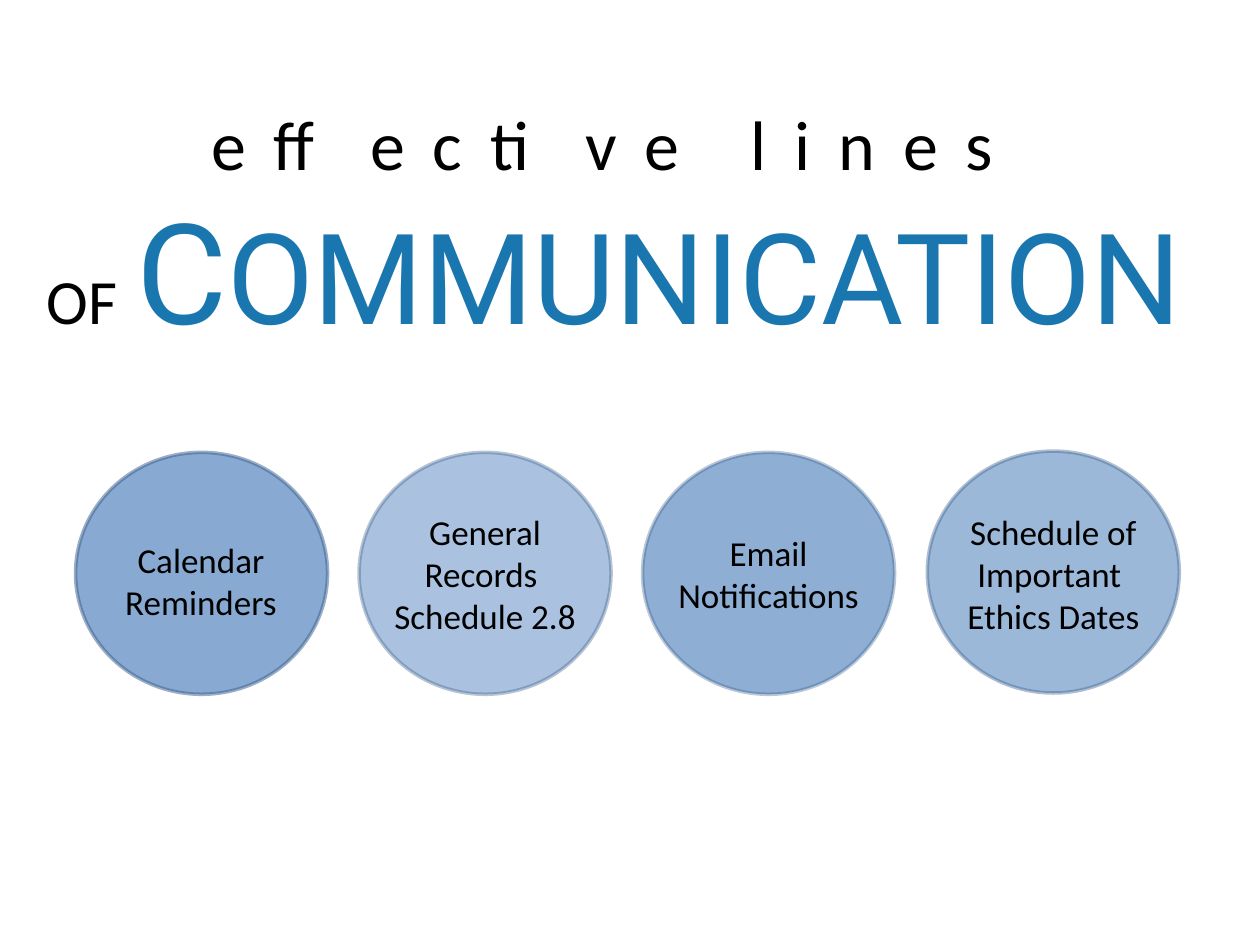
from lxml import etree
from pptx import Presentation
from pptx import util as u
from pptx.dml.color import RGBColor
from pptx.enum import shapes, text
from pptx.oxml.ns import qn

PX = u.Inches(1) // 100  # 100 px to the inch

BLACK = RGBColor(0x00, 0x00, 0x00)
TITLE_BLUE = RGBColor(0x19, 0x76, 0xAF)
CIRCLE_BLUE = RGBColor(0x4F, 0x81, 0xBD)
RIM_BLUE = RGBColor(0x3A, 0x5F, 0x8C)

TITLE_BOX = (25, 75, 942, 212)
CIRCLE_ROW = (60, 359, 876, 192)
CIRCLE_WIDTH = 200

# words, size, font, colour, letter spacing in points
TITLE_LINES = [
    [("effective lines ", 40, "Calibri", BLACK, 16)],
    [("OF", 36, "Calibri", BLACK, 0),
     (" ", 48, "Calibri", BLACK, 0),
     ("C", 80, "Roboto", TITLE_BLUE, 0),
     ("OMMUNICATION", 72, "Roboto", TITLE_BLUE, 0),
     (" ", 48, "Lato", TITLE_BLUE, 0)],
]

# label lines, label box relative to its circle, side and top inset,
# circle rise, fill and rim opacity in percent
CHANNELS = [
    (["Calendar Reminders"], (12, 68, 175, 67), 0, 0, 67, 50),
    (["General Records ", "Schedule 2.8"], (0, 41, 200, 111), None, 0, 48, 37),
    (["Email Notifications"], (0, 58, 200, 77), None, 0, 64, 34),
    (["Schedule of Important ", "Ethics Dates"], (-4, 42, 208, 111), None, 1, 56, 40),
]


def emu(*lengths):
    return [length * PX for length in lengths]


def add_title(page, box):
    title = page.shapes.title
    title.left, title.top, title.width, title.height = emu(*box)
    frame = title.text_frame
    frame.word_wrap = True
    frame.auto_size = text.MSO_AUTO_SIZE.NONE
    frame.vertical_anchor = text.MSO_ANCHOR.TOP
    for index, line in enumerate(TITLE_LINES):
        para = frame.add_paragraph() if index else frame.paragraphs[0]
        para.alignment = text.PP_ALIGN.CENTER
        for words, size, font, colour, spacing in line:
            span = para.add_run()
            span.text = words
            span.font.size = u.Pt(size)
            span.font.name = font
            span.font.color.rgb = colour
            if spacing:
                span.font._element.set("spc", str(spacing * 100))


def add_circle(page, box, fill_opacity, rim_opacity):
    circle = page.shapes.add_shape(shapes.MSO_SHAPE.OVAL, *emu(*box))
    circle.shadow.inherit = False
    circle.fill.solid()
    circle.fill.fore_color.rgb = CIRCLE_BLUE
    circle.line.color.rgb = RIM_BLUE
    circle.line.width = u.Pt(2)
    colours = circle._element.spPr.iter(qn("a:srgbClr"))
    for colour, opacity in zip(colours, (fill_opacity, rim_opacity)):
        etree.SubElement(colour, qn("a:alpha"), val=str(opacity * 1000))


def add_label(page, box, lines, inset):
    frame = page.shapes.add_textbox(*emu(*box)).text_frame
    frame.word_wrap = True
    if inset is not None:
        frame.margin_left = frame.margin_right = inset * PX
        frame.margin_top = frame.margin_bottom = inset * PX
    for index, line in enumerate(lines):
        para = frame.add_paragraph() if index else frame.paragraphs[0]
        para.text = line
        para.alignment = text.PP_ALIGN.CENTER
        para.font.size = u.Pt(20)
        para.font.name = "Calibri"
        para.font.color.rgb = BLACK


def add_channels(page, box):
    """Spread the labelled circles evenly over the width of the box."""
    left, top, width, height = box
    span = width - CIRCLE_WIDTH
    for index, channel in enumerate(CHANNELS):
        lines, label, inset, rise, fill_opacity, rim_opacity = channel
        x = left + index * span // (len(CHANNELS) - 1)
        y = top - rise
        add_circle(page, (x, y, CIRCLE_WIDTH, height), fill_opacity, rim_opacity)
        dx, dy, label_width, label_height = label
        add_label(page, (x + dx, y + dy, label_width, label_height), lines, inset)


def main():
    deck = Presentation()
    deck.slide_width, deck.slide_height = emu(1000, 750)
    page = deck.slides.add_slide(deck.slide_layouts.get_by_name("Title Only"))
    add_title(page, TITLE_BOX)
    add_channels(page, CIRCLE_ROW)
    deck.save("out.pptx")


if __name__ == "__main__":
    main()
